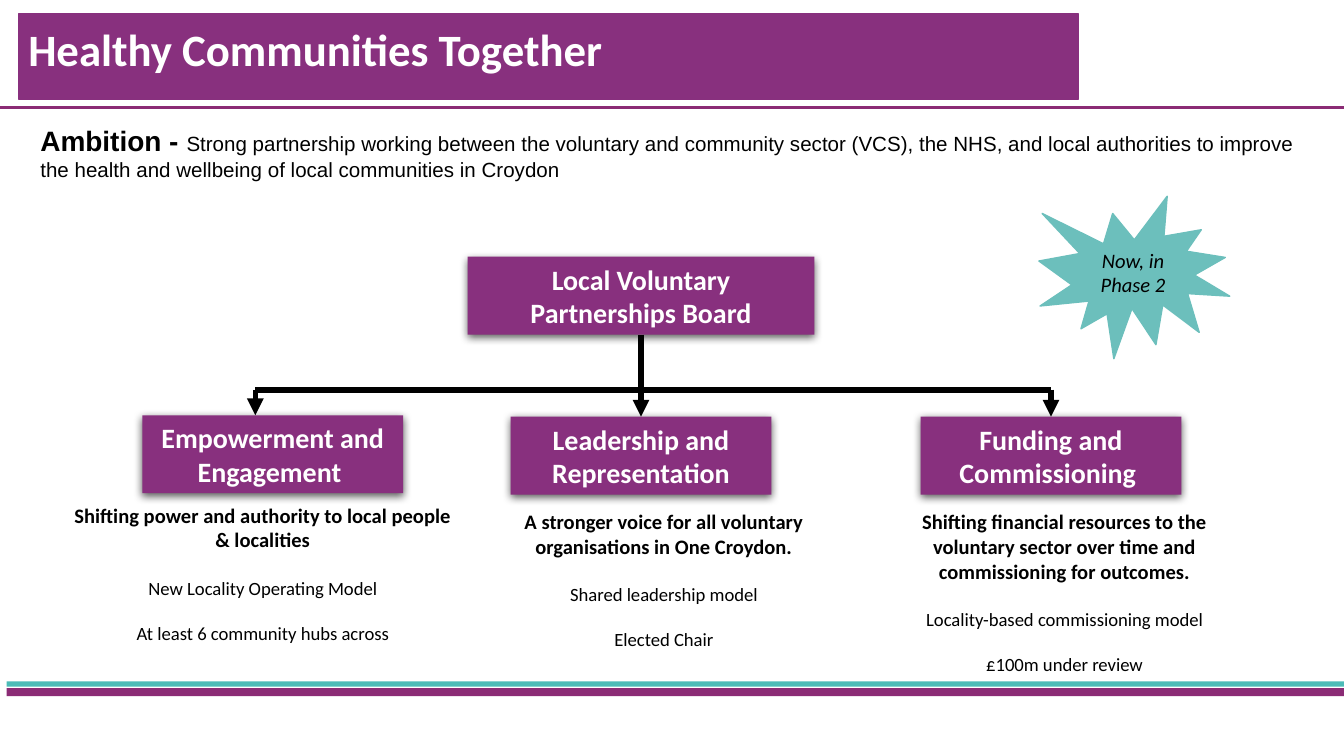
from dataclasses import dataclass
from typing import Optional

from lxml.etree import SubElement
from pptx import Presentation
from pptx.dml.color import RGBColor as Rgb
from pptx.enum.shapes import MSO_CONNECTOR as Link, MSO_SHAPE as Preset
from pptx.enum.text import MSO_ANCHOR as Anchor, PP_ALIGN as Align
from pptx.oxml.ns import qn
from pptx.util import Inches, Pt


@dataclass(frozen=True)
class Theme:
    purple: Rgb = Rgb(0x88, 0x30, 0x7E)
    plum: Rgb = Rgb(0x8B, 0x2B, 0x75)
    teal: Rgb = Rgb(0x4C, 0xBB, 0xB7)
    burst: Rgb = Rgb(0x6C, 0xBF, 0xBC)
    black: Rgb = Rgb(0, 0, 0)
    white: Rgb = Rgb(255, 255, 255)
    title: float = 24
    heading: float = 15
    body: float = 11
    detail: float = 10
    main_font: str = "Calibri"
    ambition_font: str = "Arial"


@dataclass(frozen=True)
class Area:
    left: float
    top: float
    width: float
    height: float

    def lengths(self):
        return [Inches(v) for v in (self.left, self.top, self.width, self.height)]


@dataclass(frozen=True)
class Branch:
    heading: str
    box: Area
    notes: Area
    aim: str
    details: tuple[str, ...]
    drop: float
    joined: bool = True


THEME = Theme()
SLIDE_WIDTH = 10
BOX_WIDTH, BOX_HEIGHT = 1.94, 0.58
RAIL_Y = 2.9

BRANCHES = [
    Branch("Empowerment and Engagement ", Area(1.06, 3.09, BOX_WIDTH, BOX_HEIGHT),
           Area(0.44, 3.7, 3.03, 1.1),
           "Shifting power and authority to local people & localities",
           ("New Locality Operating Model", "At least 6 community hubs across"),
           1.9, joined=False),
    Branch("Leadership and Representation", Area(3.8, 3.1, BOX_WIDTH, BOX_HEIGHT),
           Area(3.61, 3.75, 2.66, 1.1),
           "A stronger voice for all voluntary organisations in One Croydon.",
           ("Shared leadership model", "Elected Chair"), 4.77),
    Branch("Funding and Commissioning ", Area(6.85, 3.1, BOX_WIDTH, BOX_HEIGHT),
           Area(6.63, 3.75, 2.58, 1.27),
           "Shifting financial resources to the voluntary sector over time and "
           "commissioning for outcomes.",
           ("Locality-based commissioning model", "£100m under review"), 7.82),
]


def set_font(font, size: float, color: Rgb, name: str = THEME.main_font,
             bold: bool = False, italic: bool = False) -> None:
    font.size, font.name, font.bold, font.italic = Pt(size), name, bold, italic
    font.color.rgb = color


def prepare(frame, anchor=Anchor.TOP):
    frame.word_wrap = True
    frame.vertical_anchor = anchor
    frame.margin_left = frame.margin_right = Inches(0.07)
    frame.margin_top = frame.margin_bottom = Inches(0.04)
    return frame


def add_block(slide, area: Area, fill: Rgb, outline: Optional[Rgb] = None,
              preset=Preset.RECTANGLE):
    block = slide.shapes.add_shape(preset, *area.lengths())
    block.shadow.inherit = False
    block.fill.solid()
    block.fill.fore_color.rgb = fill
    if outline is None:
        block.line.fill.background()
    else:
        block.line.color.rgb = outline
        block.line.width = Pt(0.75)
    return block


def add_heading_box(slide, area: Area, heading: str):
    box = add_block(slide, area, THEME.purple)
    effects = box._element.spPr.find(qn("a:effectLst"))
    shadow = SubElement(effects, qn("a:outerShdw"), blurRad=str(Pt(4.5)),
                        dist=str(Pt(1.5)), dir="5400000", rotWithShape="0")
    shade = SubElement(shadow, qn("a:srgbClr"), val=str(THEME.black))
    SubElement(shade, qn("a:alpha"), val="63000")
    line = prepare(box.text_frame, Anchor.MIDDLE).paragraphs[0]
    line.text, line.alignment = heading, Align.CENTER
    set_font(line.font, THEME.heading, THEME.white, bold=True)
    return box


def add_line(slide, start: tuple[float, float], end: tuple[float, float],
             color: Rgb = THEME.black, width: float = 3, arrow: bool = False):
    line = slide.shapes.add_connector(
        Link.STRAIGHT, *(Inches(v) for v in start + end))
    line.line.color.rgb = color
    line.line.width = Pt(width)
    if arrow:
        SubElement(line.line._get_or_add_ln(), qn("a:tailEnd"), type="triangle")
    SubElement(line._element.spPr, qn("a:effectLst"))
    return line


def add_text(slide, area: Area):
    return prepare(slide.shapes.add_textbox(*area.lengths()).text_frame)


def add_notes(slide, branch: Branch) -> None:
    frame = add_text(slide, branch.notes)
    aim = frame.paragraphs[0]
    aim.text, aim.alignment = branch.aim, Align.CENTER
    set_font(aim.font, THEME.body, THEME.black, bold=True)
    previous_size = THEME.body
    for detail in branch.details:
        item = frame.add_paragraph()
        item.text, item.alignment = detail, Align.CENTER
        item.space_before = Pt(round(previous_size * 1.2, 1))
        set_font(item.font, THEME.detail, THEME.black)
        previous_size = THEME.detail


def add_branch(slide, branch: Branch) -> None:
    box = add_heading_box(slide, branch.box, branch.heading)
    arrow = add_line(slide, (branch.drop, RAIL_Y), (branch.drop, branch.box.top),
                     arrow=True)
    if branch.joined:
        arrow.end_connect(box, 0)
    add_notes(slide, branch)


def add_banner(slide) -> None:
    add_block(slide, Area(0.05, 5.12, SLIDE_WIDTH, 0.06), THEME.plum)
    add_block(slide, Area(0.05, 5.07, SLIDE_WIDTH, 0.04), THEME.teal)
    add_block(slide, Area(0.14, 0.1, 7.88, 0.64), THEME.purple, THEME.purple)
    add_line(slide, (0, 0.8), (SLIDE_WIDTH, 0.8), THEME.plum, 1.5)
    title = add_text(slide, Area(0.14, 0.12, 7.58, 0.48)).paragraphs[0]
    title.text = "Healthy Communities Together"
    set_font(title.font, THEME.title, THEME.white, bold=True)


def add_ambition(slide) -> None:
    ambition = add_text(slide, Area(0.23, 0.88, 9.55, 0.51)).paragraphs[0]
    label, statement = ambition.add_run(), ambition.add_run()
    label.text = "Ambition - "
    statement.text = (
        "Strong partnership working between the voluntary and community sector (VCS), "
        "the NHS, and local authorities to improve the health and wellbeing of local "
        "communities in Croydon")
    set_font(label.font, THEME.heading, THEME.black, THEME.ambition_font, bold=True)
    set_font(statement.font, THEME.body, THEME.black, THEME.ambition_font)


def add_phase(slide) -> None:
    burst = add_block(slide, Area(7.73, 1.46, 1.42, 1.21), THEME.burst, THEME.burst,
                      Preset.EXPLOSION1)
    phase = prepare(burst.text_frame, Anchor.MIDDLE).paragraphs[0]
    phase.text, phase.alignment = "Now, in Phase 2", Align.CENTER
    set_font(phase.font, THEME.body, THEME.black, italic=True)


def main() -> None:
    deck = Presentation()
    deck.slide_width, deck.slide_height = Inches(SLIDE_WIDTH), Inches(SLIDE_WIDTH * 9 / 16)
    slide = deck.slides.add_slide(deck.slide_layouts[6])
    add_banner(slide)
    board = add_heading_box(slide, Area(3.48, 1.91, 2.58, BOX_HEIGHT),
                            "Local Voluntary Partnerships Board")
    add_line(slide, (BRANCHES[0].drop, RAIL_Y), (BRANCHES[-1].drop, RAIL_Y))
    stem = add_line(slide, (4.77, 2.49), (4.77, RAIL_Y))
    stem.begin_connect(board, 2)
    for branch in BRANCHES:
        add_branch(slide, branch)
    add_ambition(slide)
    add_phase(slide)
    deck.save("out.pptx")


if __name__ == "__main__":
    main()
